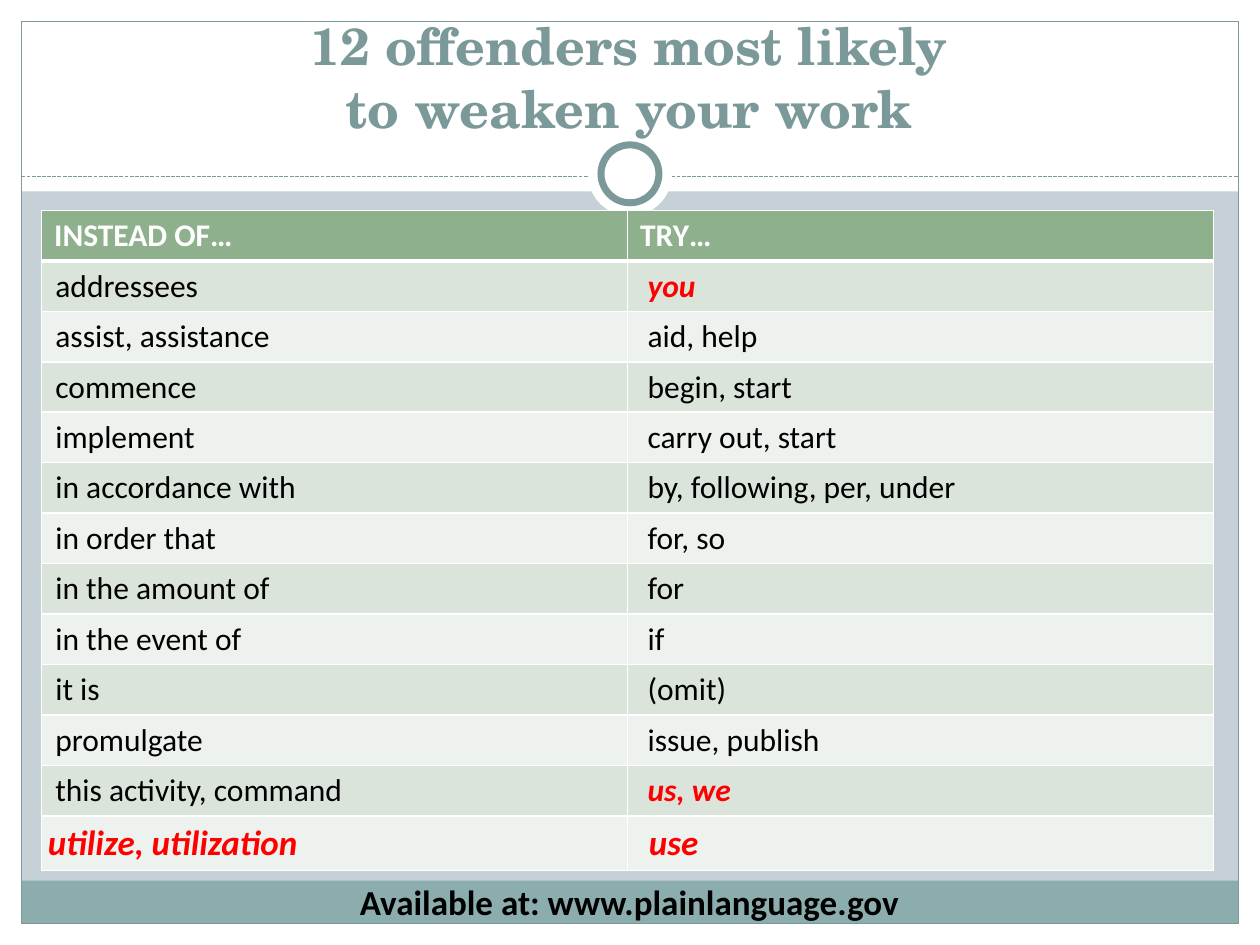
"""Build a slide that pairs weak words with plain ones."""
import pptx
import pptx.util
import pptx.dml.color
import pptx.enum.dml
import pptx.enum.shapes
import pptx.enum.text
import pptx.oxml
import pptx.oxml.ns
import lxml.etree

WIDE, HIGH = 10, 7.5
EDGE, TOP = 0.17, 1.52
WHITE, TEAL, RED, BLACK = "FFFFFF", "7C999A", "FF0000", "000000"
BANDS = ["EEF2EE", "DBE4DA"]
HEAD = ["INSTEAD OF…", "TRY…"]
ROWS = [
    ("addressees", "you"),
    ("assist, assistance", "aid, help"),
    ("commence", "begin, start"),
    ("implement", "carry out, start"),
    ("in accordance with", "by, following, per, under"),
    ("in order that", "for, so"),
    ("in the amount of", "for"),
    ("in the event of", "if"),
    ("it is", "(omit)"),
    ("promulgate", "issue, publish"),
    ("this activity, command", "us, we"),
    ("utilize, utilization", "use"),
]
KEYS = {"you", "us, we", "utilize, utilization", "use"}
MASKS = [
    (0, HIGH - EDGE, WIDE, EDGE, WHITE),
    (0, 0, WIDE, TOP, WHITE),
    (0, 0, EDGE, HIGH, WHITE),
    (WIDE - EDGE, 0, EDGE, HIGH, WHITE),
    (EDGE, 6.99, WIDE - 2 * EDGE, 0.34, "8CADAE"),
]
RINGS = [(0.67, None, 0), (0.46, TEAL, 4)]

inch = pptx.util.Inches
kinds = pptx.enum.shapes.MSO_SHAPE
anchors = pptx.enum.text.MSO_ANCHOR


def tint(code):
    return pptx.dml.color.RGBColor.from_string(code)


def write(frame, text, size=18, font="Calibri", color=BLACK, bold=False, slant=False, align=None):
    frame.text = text
    for para in frame.paragraphs:
        para.alignment = align
        for run in para.runs:
            run.font.size, run.font.name = pptx.util.Pt(size), font
            run.font.bold, run.font.italic = bold, slant
            run.font.color.rgb = tint(color)


def draw(slide, kind, box, fill=None, line=None, width=0.75):
    shape = slide.shapes.add_shape(kind, *map(inch, box))
    shape.shadow.inherit = False
    if fill:
        shape.fill.solid()
        shape.fill.fore_color.rgb = tint(fill)
    else:
        shape.fill.background()
    if line:
        shape.line.color.rgb = tint(line)
        shape.line.width = pptx.util.Pt(width)
    else:
        shape.line.fill.background()


def label(slide, box, text, anchor, wrap, **style):
    frame = slide.shapes.add_textbox(*map(inch, box)).text_frame
    frame.word_wrap, frame.vertical_anchor = wrap, anchor
    write(frame, text, align=pptx.enum.text.PP_ALIGN.CENTER, **style)


def border(cell, **widths):
    props = cell._tc.get_or_add_tcPr()
    for spot, side in enumerate("LRTB"):
        width = pptx.util.Pt(widths.get(side, 1))
        props.insert(spot, pptx.oxml.parse_xml(
            f'<a:ln{side} {pptx.oxml.ns.nsdecls("a")} w="{width}"><a:solidFill>'
            f'<a:srgbClr val="{WHITE}"/></a:solidFill></a:ln{side}>'))


def paint(cell, fill, **widths):
    cell.fill.solid()
    cell.fill.fore_color.rgb = tint(fill)
    border(cell, **widths)


def fill_row(table, row, pair):
    last = row == len(ROWS)
    for col, text in enumerate(pair):
        cell, key = table.cell(row, col), text in KEYS
        pad = (0.05, 0.17) if last else (0.11, 0.16)
        cell.margin_left = inch(pad[col])
        cell.margin_right = cell.margin_top = cell.margin_bottom = inch(0.05)
        cell.vertical_anchor = anchors.MIDDLE
        write(cell.text_frame, text, size=20 if last else 18,
              color=RED if key else BLACK, bold=key, slant=key)
        paint(cell, BANDS[row % 2], T=3 if row == 1 else 1)


def main():
    deck = pptx.Presentation()
    deck.slide_width, deck.slide_height = inch(WIDE), inch(HIGH)
    slide = deck.slides.add_slide(deck.slide_layouts[6])
    slide.background.fill.solid()
    slide.background.fill.fore_color.rgb = tint("C5D1D7")

    for *box, fill in MASKS:
        draw(slide, kinds.RECTANGLE, box, fill)
    draw(slide, kinds.RECTANGLE, (EDGE, EDGE, WIDE - 2 * EDGE, HIGH - 2 * EDGE), line=TEAL)
    rule = slide.shapes.add_connector(
        pptx.enum.shapes.MSO_CONNECTOR.STRAIGHT, *map(inch, (EDGE, 1.4, WIDE - EDGE, 1.4)))
    rule.line.color.rgb, rule.line.width = tint(TEAL), pptx.util.Pt(0.75)
    rule.line.dash_style = pptx.enum.dml.MSO_LINE.SQUARE_DOT
    lxml.etree.SubElement(rule._element.spPr, pptx.oxml.ns.qn("a:effectLst"))
    for size, line, width in RINGS:
        box = (WIDE / 2 - size / 2, 1.38 - size / 2, size, size)
        draw(slide, kinds.OVAL, box, WHITE, line, width)

    label(slide, (0.33, 0.32, 9.33, 0.83), "12 offenders most likely\vto weaken your work",
          anchors.BOTTOM, True, size=29.7, font="TeX Gyre Schola", color=TEAL, bold=True)

    count = len(ROWS) + 1
    table = slide.shapes.add_table(
        count, 2, *map(inch, (0.33, 1.67, 9.3, 0.4 * count))).table
    for col, text in enumerate(HEAD):
        cell = table.cell(0, col)
        write(cell.text_frame, text, color=WHITE, bold=True)
        paint(cell, "8FB08C", B=3)
    for row, pair in enumerate(ROWS, 1):
        fill_row(table, row, pair)

    label(slide, (2.74, 6.94, 4.51, 0.44), "Available at: www.plainlanguage.gov",
          anchors.TOP, False, size=20, bold=True)
    deck.save("out.pptx")


if __name__ == "__main__":
    main()
